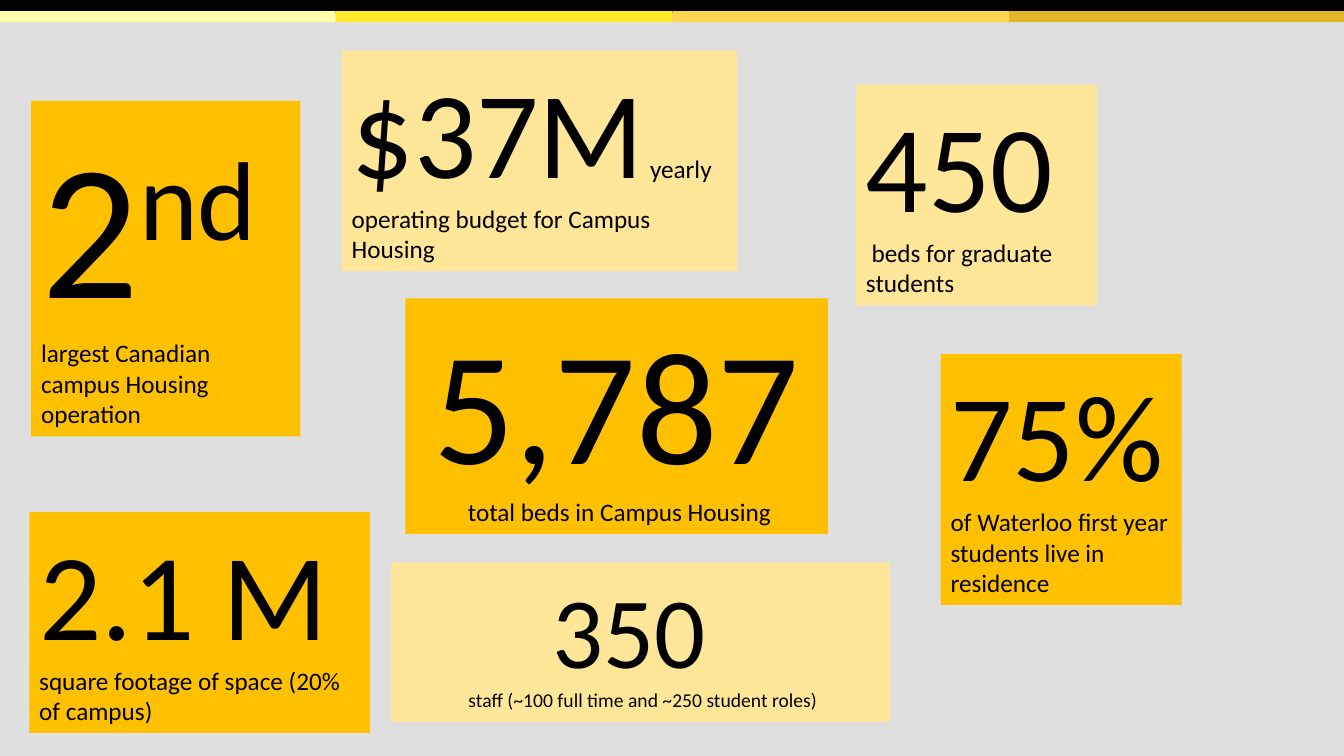
from pptx import Presentation
from pptx.dml.color import RGBColor
from pptx.enum.shapes import MSO_SHAPE
from pptx.enum.text import MSO_AUTO_SIZE, PP_ALIGN
from pptx.util import Inches, Pt

RECT = MSO_SHAPE.RECTANGLE
LEFT, CENTER = PP_ALIGN.LEFT, PP_ALIGN.CENTER
GROW = MSO_AUTO_SIZE.SHAPE_TO_FIT_TEXT
GOLD, PALE = "FFC000", "FFE699"


def set_fill(fill, color):
    fill.solid()
    fill.fore_color.rgb = RGBColor.from_string(color)


prs = Presentation()
prs.slide_width, prs.slide_height = Inches(13.33), Inches(7.5)
s = prs.slides.add_slide(prs.slide_layouts[6])
set_fill(s.background.fill, "DFDFDF")

# Header: a black strip above four equal colour bands
BAND_W = 3.34
bands = [(-0.01, 0, 13.35, 0.13, "000000")]
for i, color in enumerate(["FFFFAA", "FFEA29", "FFD54F", "E4B429"]):
    bands.append((-0.01 + i * BAND_W, 0.11, BAND_W, 0.11, color))
for x, y, w, h, color in bands:
    sp = s.shapes.add_shape(RECT, Inches(x), Inches(y), Inches(w), Inches(h))
    sp.shadow.inherit = False
    set_fill(sp.fill, color)
    sp.line.fill.background()

# Fact cards: position, fill, alignment, paragraphs of (text, size, baseline in 1/1000 %)
cards = [
    (0.31, 1, 2.67, 3.33, GOLD, LEFT,
     [[("2", 138, 0), ("nd", 138, 30000),
       (" largest Canadian campus Housing operation", 18, 0)]]),
    (4.02, 2.96, 4.19, 2.34, GOLD, CENTER,
     [[("5,787", 115, 0)], [(" total beds in Campus Housing", 18, 0)]]),
    (9.33, 3.51, 2.39, 2.49, GOLD, LEFT,
     [[("75%", 88, 0),
       (" of Waterloo first year students live in residence", 18, 0)]]),
    (8.49, 0.84, 2.39, 2.19, PALE, LEFT,
     [[("450", 88, 0)], [(" beds for graduate students", 18, 0)]]),
    (3.39, 0.5, 3.92, 2.19, PALE, LEFT,
     [[("$37M", 88, 0),
       (" yearly operating budget for Campus Housing", 18, 0)]]),
    (0.29, 5.08, 3.38, 2.19, GOLD, LEFT,
     [[("2.1 M", 88, 0), (" square footage of space (20% of campus)", 18, 0)]]),
    (3.88, 5.58, 4.95, 1.58, PALE, CENTER,
     [[("350 ", 72, 0)],
      [(" staff (~100 full time and ~250 student roles)", 14, 0)]]),
]
for x, y, w, h, color, align, paragraphs in cards:
    sp = s.shapes.add_textbox(Inches(x), Inches(y), Inches(w), Inches(h))
    set_fill(sp.fill, color)
    tf = sp.text_frame
    tf.word_wrap = True
    tf.auto_size = GROW
    for i, runs in enumerate(paragraphs):
        p = tf.add_paragraph() if i else tf.paragraphs[0]
        p.alignment = align
        for text, size, baseline in runs:
            r = p.add_run()
            r.text = text
            r.font.name = "Calibri"
            r.font.size = Pt(size)
            set_fill(r.font.fill, "000000")
            if baseline:
                r._r.get_or_add_rPr().set("baseline", str(baseline))

prs.save("out.pptx")
